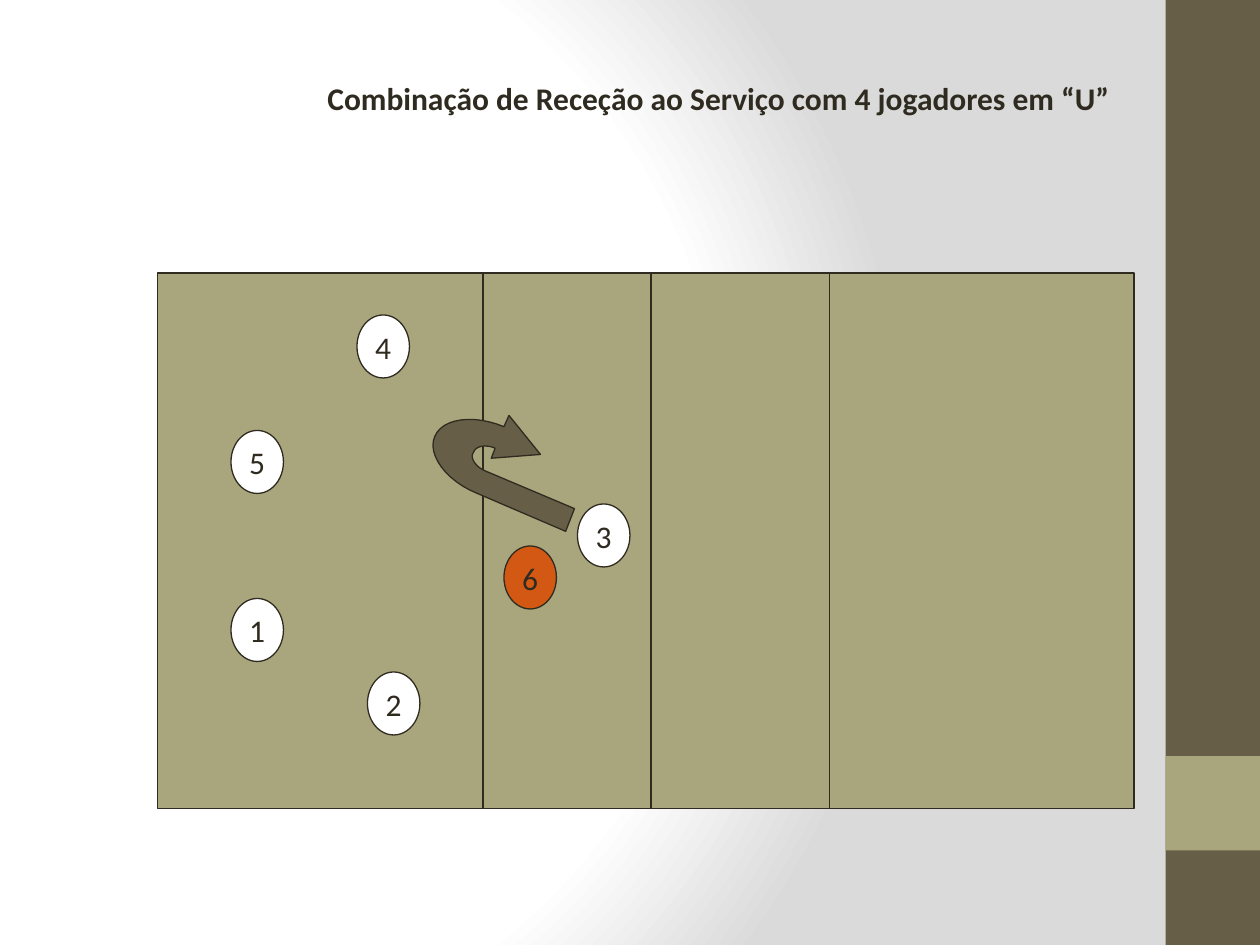
import pptx
import pptx.util
import pptx.dml.color
import pptx.enum.shapes
import pptx.enum.text
import pptx.oxml
import pptx.oxml.ns

INK, BROWN, SAND, WHITE, ORANGE = "2F2B20", "675E47", "A9A57C", "FFFFFF", "D25814"
SHAPE = pptx.enum.shapes.MSO_SHAPE
UNIT = 1 / 12  # grid step of the court, in inches

# Marker positions in grid steps from the court's corner
PLAYERS = [("3", 40, 22, WHITE), ("4", 19, 4, WHITE), ("5", 7, 15, WHITE),
           ("6", 33, 26, ORANGE), ("2", 20, 38, WHITE), ("1", 7, 31, WHITE)]
COURT_LINES = [31, 47, 64]

# Turning arrow in hundredths of an inch: one point is a line, three a curve
ARROW_START = (89, 31)
ARROW_PARTS = [[(64, 0)], [(60, 9)],
               [(36, -1), (11, 2), (5, 17)], [(-1, 31), (14, 52), (39, 62)],
               [(109, 92)], [(116, 74)], [(45, 44)],
               [(38, 41), (34, 35), (35, 31)], [(36, 29)],
               [(38, 24), (46, 23), (53, 26)], [(50, 34)]]


def inch(value):
    return pptx.util.Inches(value)


def rgb(color):
    return pptx.dml.color.RGBColor.from_string(color)


def style(sp, fill, line=None):
    sp.shadow.inherit = False
    sp.fill.solid()
    sp.fill.fore_color.rgb = rgb(fill)
    if line:
        sp.line.color.rgb = rgb(line)
        sp.line.width = pptx.util.Pt(0.75)
    else:
        sp.line.fill.background()


def add_box(s, kind, x, y, w, h, fill, line=None):
    sp = s.shapes.add_shape(kind, inch(x), inch(y), inch(w), inch(h))
    style(sp, fill, line)
    return sp


def set_text(sp, text, bold=False):
    tf = sp.text_frame
    tf.word_wrap = False
    tf.text = text
    font = tf.paragraphs[0].runs[0].font
    font.name, font.size, font.bold = "Calibri", pptx.util.Pt(18), bold
    font.color.rgb = rgb(INK)
    return tf


def set_background(s):
    s.background.fill.solid()
    bg = s._element.find(".//" + pptx.oxml.ns.qn("p:bgPr"))
    stops = "".join(f'<a:gs pos="{pos * 1000}"><a:srgbClr val="{color}"/></a:gs>'
                    for pos, color in [(0, WHITE), (75, WHITE), (100, "DADADA")])
    bg.replace(bg[0], pptx.oxml.parse_xml(
        f'<a:gradFill {pptx.oxml.ns.nsdecls("a")} rotWithShape="1"><a:gsLst>{stops}</a:gsLst>'
        '<a:path path="circle"><a:fillToRect l="20000" t="50000" r="100000" b="50000"/>'
        '</a:path></a:gradFill>'))


def add_side_band(s, x, y, w, h):
    add_box(s, SHAPE.RECTANGLE, x, y, w, h, BROWN)
    add_box(s, SHAPE.RECTANGLE, x, y + 0.8 * h, w, 0.1 * h, SAND)


def add_title(s, x, y, w, h):
    sp = s.shapes.add_textbox(inch(x), inch(y), inch(w), inch(h))
    set_text(sp, "Combinação de Receção ao Serviço com 4 jogadores em “U”", bold=True)


def add_player(s, x, y, number, fill):
    sp = add_box(s, SHAPE.OVAL, x, y, 5 * UNIT, 6 * UNIT, fill, INK)
    tf = set_text(sp, number)
    tf.vertical_anchor = pptx.enum.text.MSO_ANCHOR.MIDDLE
    tf.paragraphs[0].alignment = pptx.enum.text.PP_ALIGN.CENTER


def add_court_line(s, x, top, bottom):
    line = s.shapes.add_connector(pptx.enum.shapes.MSO_CONNECTOR.STRAIGHT,
                                  inch(x), inch(top), inch(x), inch(bottom))
    line.line.color.rgb = rgb(INK)
    line.line.width = pptx.util.Pt(0.75)
    line._element.spPr.append(pptx.oxml.parse_xml(
        f'<a:effectLst {pptx.oxml.ns.nsdecls("a")}/>'))


def curve_points(start, a, b, end, steps=12):
    """Points along a cubic Bézier curve, without its start."""
    for i in range(1, steps + 1):
        t = i / steps
        u = 1 - t
        yield tuple(u**3 * p + 3 * u * u * t * q + 3 * u * t * t * r + t**3 * e
                    for p, q, r, e in zip(start, a, b, end))


def add_turn_arrow(s, x, y):
    points = [ARROW_START]
    for part in ARROW_PARTS:
        points += part if len(part) == 1 else curve_points(points[-1], *part)
    places = [(inch(x + px / 100), inch(y + py / 100)) for px, py in points]
    builder = s.shapes.build_freeform(*places[0])
    builder.add_line_segments(places[1:], close=True)
    style(builder.convert_to_shape(), BROWN, INK)


def add_court(s, x, y, w, h):
    add_box(s, SHAPE.RECTANGLE, x, y, w, h, SAND, INK)
    for number, col, row, fill in PLAYERS:
        add_player(s, x + col * UNIT, y + row * UNIT, number, fill)
    for col in COURT_LINES:
        add_court_line(s, x + col * UNIT, y, y + h)
    add_turn_arrow(s, x + 2.15, y + 1.13)


def main():
    prs = pptx.Presentation()
    prs.slide_width, prs.slide_height = inch(10), inch(7.5)
    s = prs.slides.add_slide(prs.slide_layouts[6])
    set_background(s)
    add_side_band(s, 9.25, 0, 0.75, 7.5)
    add_title(s, 2.5, 0.58, 6.46, 0.4)
    add_court(s, 15 * UNIT, 26 * UNIT, 93 * UNIT, 51 * UNIT)
    prs.save("out.pptx")


if __name__ == "__main__":
    main()
